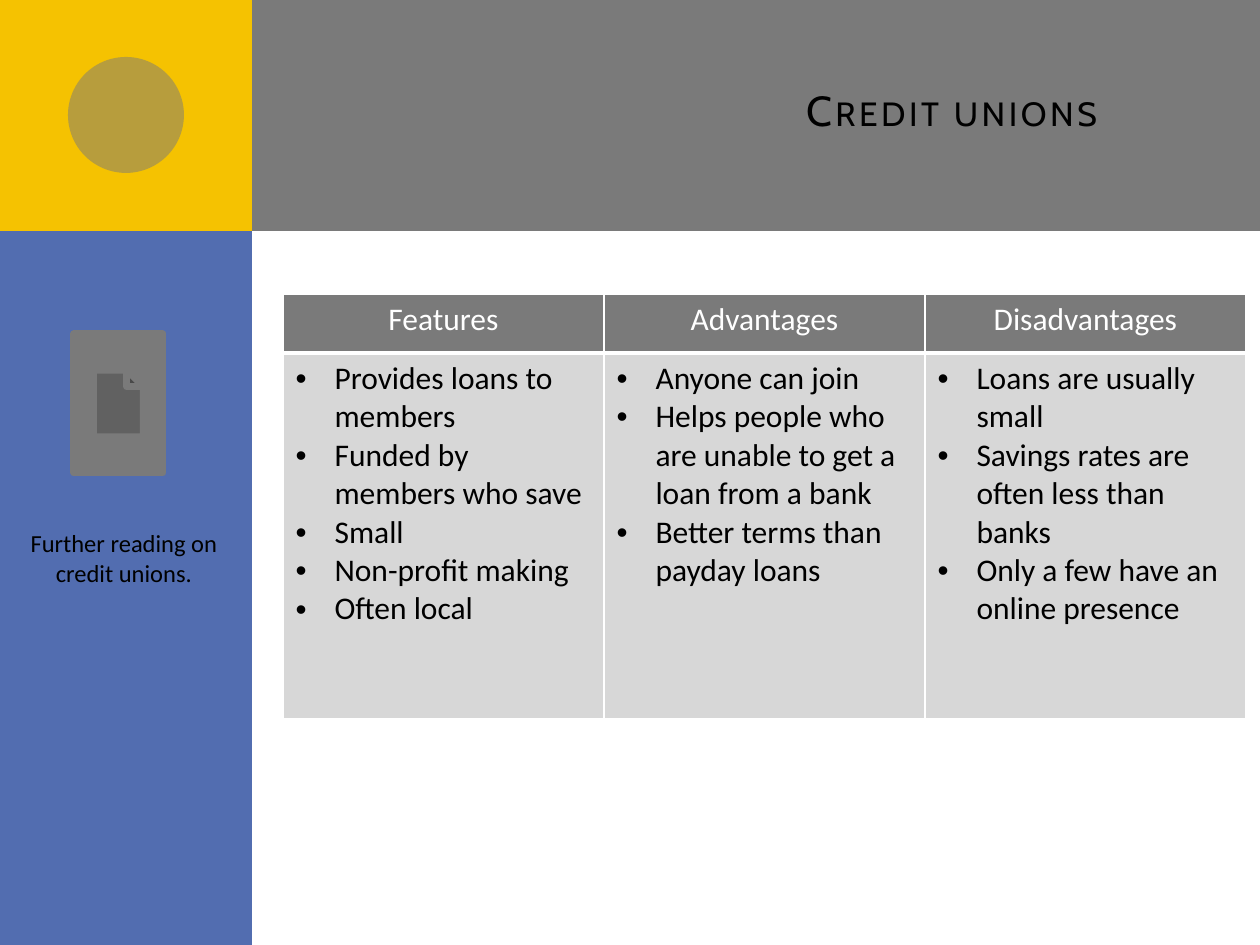
from dataclasses import dataclass

from lxml import etree
from pptx import Presentation
from pptx import util as u
from pptx.dml.color import RGBColor
from pptx.enum import shapes, text
from pptx.oxml.ns import qn

PX_PER_INCH = 126


@dataclass(frozen=True)
class Theme:
    grey: str = "7A7A7A"
    blue: str = "526DB0"
    yellow: str = "F5C201"
    pale: str = "D7D7D7"
    white: str = "FFFFFF"
    black: str = "000000"
    title_font: str = "Cabin"
    body_font: str = "Calibri"
    title_size: int = 24
    table_size: int = 18
    caption_size: int = 14


THEME = Theme()

COLUMNS = {
    "Features": [
        "Provides loans to members",
        "Funded by members who save",
        "Small",
        "Non-profit making",
        "Often local",
    ],
    "Advantages": [
        "Anyone can join",
        "Helps people who are unable to get a loan from a bank",
        "Better terms than payday loans",
    ],
    "Disadvantages": [
        "Loans are usually small",
        "Savings rates are often less than banks",
        "Only a few have an online presence",
    ],
}


def px(count):
    return u.Emu(round(count * 914400 / PX_PER_INCH))


def place(box):
    return [px(side) for side in box]


def add_block(page, kind, box, color):
    block = page.shapes.add_shape(kind, *place(box))
    block.shadow.inherit = False
    block.fill.solid()
    block.fill.fore_color.rgb = RGBColor.from_string(color)
    block.line.fill.background()
    return block


def style(para, font, size, color, align):
    para.alignment = align
    para.font.name = font
    para.font.size = u.Pt(size)
    para.font.color.rgb = RGBColor.from_string(color)


def add_text(page, box, words, font, size, align):
    label = page.shapes.add_textbox(*place(box))
    label.text_frame.word_wrap = True
    para = label.text_frame.paragraphs[0]
    para.text = words
    style(para, font, size, THEME.black, align)
    return label


def add_bullet(para, indent):
    """Give the paragraph a hanging bullet."""
    props = para._p.get_or_add_pPr()
    props.set("marL", str(px(indent)))
    props.set("indent", str(-px(indent)))
    bullet_font = etree.Element(qn("a:buFont"), typeface="Arial")
    bullet = etree.Element(qn("a:buChar"), char="•")
    props.insert(0, bullet_font)
    props.insert(1, bullet)


def add_borders(cell, top, bottom):
    """Draw white cell borders; side borders are one point wide."""
    props = cell._tc.get_or_add_tcPr()
    widths = {"a:lnL": 1, "a:lnR": 1, "a:lnT": top, "a:lnB": bottom}
    for place_in_order, (tag, width) in enumerate(widths.items()):
        line = etree.Element(qn(tag), w=str(u.Pt(width)))
        fill = etree.SubElement(line, qn("a:solidFill"))
        etree.SubElement(fill, qn("a:srgbClr"), val=THEME.white)
        props.insert(place_in_order, line)


def fill_cell(cell, lines, fill, color, align, top, bottom):
    cell.fill.solid()
    cell.fill.fore_color.rgb = RGBColor.from_string(fill)
    add_borders(cell, top, bottom)
    cell.text = "\n".join(lines)
    for para in cell.text_frame.paragraphs:
        style(para, THEME.body_font, THEME.table_size, color, align)


def add_header(page, box):
    left, top, width, height = box
    add_block(page, shapes.MSO_SHAPE.RECTANGLE, box, THEME.grey)
    title = add_text(page, (left + 84, top + 31, width - 147, height - 73),
                     "Credit unions", THEME.title_font, THEME.title_size,
                     text.PP_ALIGN.RIGHT)
    frame = title.text_frame
    frame.vertical_anchor = text.MSO_ANCHOR.MIDDLE
    frame.margin_right = px(54)
    letters = frame.paragraphs[0]._p.get_or_add_pPr().get_or_add_defRPr()
    letters.set("cap", "small")
    letters.set("spc", "200")


def add_corner(page, box):
    left, top, width, height = box
    add_block(page, shapes.MSO_SHAPE.RECTANGLE, box, THEME.yellow)
    size = 116
    circle = add_block(page, shapes.MSO_SHAPE.OVAL,
                       (left + (width - size) // 2, top + (height - size) // 2, size, size),
                       THEME.grey)
    color = circle._element.spPr.find(qn("a:solidFill"))[0]
    etree.SubElement(color, qn("a:alpha"), val="50000")


def add_sidebar(page, box):
    left, top, width, _ = box
    add_block(page, shapes.MSO_SHAPE.RECTANGLE, box, THEME.blue)
    button = add_block(page, shapes.MSO_SHAPE.ACTION_BUTTON_DOCUMENT,
                       (left + 74, top + 103, 89, 139), THEME.grey)
    button.line.color.rgb = RGBColor.from_string(THEME.grey)
    button.line.width = u.Pt(4)
    add_text(page, (left + 5, top + 291, width - 14, 72),
             "Further reading on credit unions.", THEME.body_font,
             THEME.caption_size, text.PP_ALIGN.CENTER)


def add_comparison(page, box, header_height):
    height = box[3]
    table = page.shapes.add_table(2, len(COLUMNS), *place(box)).table
    table.rows[0].height = px(header_height)
    table.rows[1].height = px(height - header_height)
    for index, (heading, points) in enumerate(COLUMNS.items()):
        fill_cell(table.cell(0, index), [heading], THEME.grey, THEME.white,
                  text.PP_ALIGN.CENTER, 1, 3)
        body = table.cell(1, index)
        fill_cell(body, points, THEME.pale, THEME.black, text.PP_ALIGN.LEFT, 3, 1)
        for para in body.text_frame.paragraphs:
            add_bullet(para, 39)


def main():
    deck = Presentation()
    deck.slide_width, deck.slide_height = px(1260), px(945)
    page = deck.slides.add_slide(deck.slide_layouts[6])
    side, band = 252, 231
    add_header(page, (side, 0, 1260 - side, band))
    add_corner(page, (0, 0, side, band))
    add_sidebar(page, (0, band, side, 945 - band))
    add_comparison(page, (283, 294, 963, 425), 59)
    deck.save("out.pptx")


if __name__ == "__main__":
    main()
